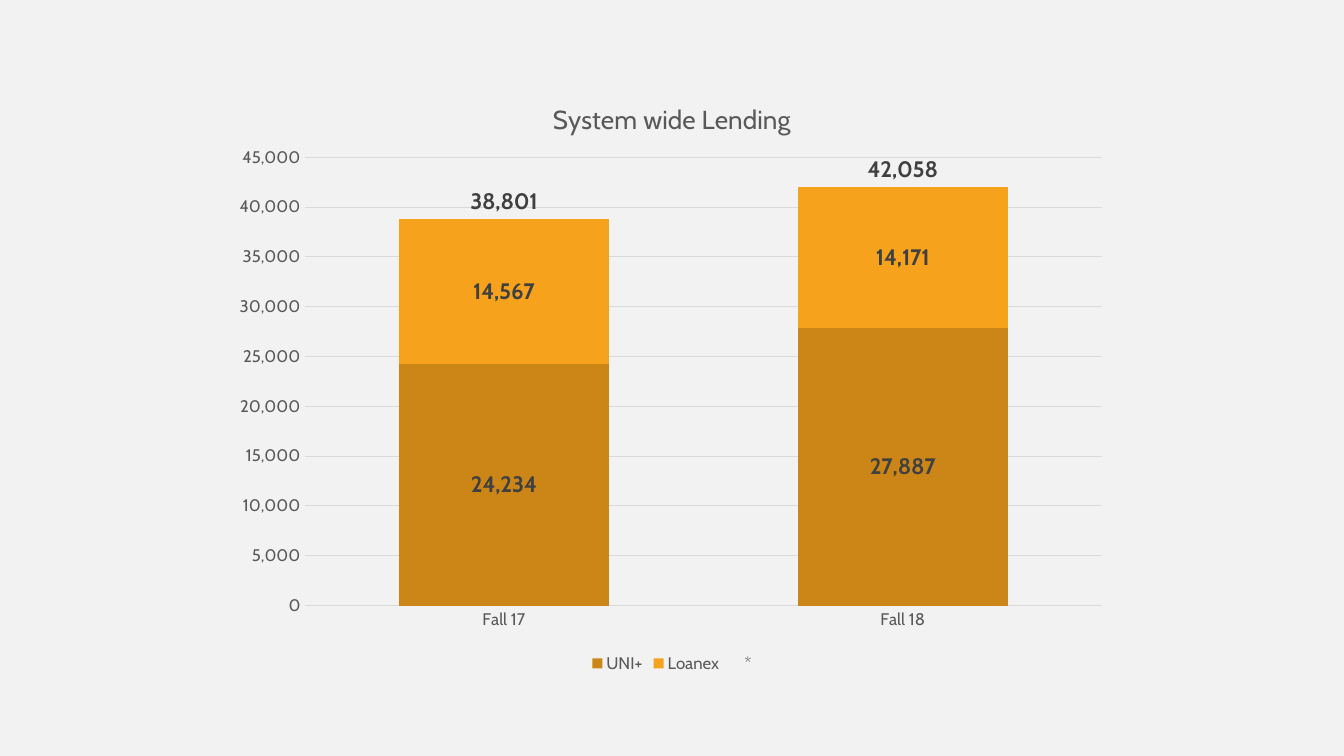
from pptx import Presentation
from pptx.chart.data import CategoryChartData
from pptx.dml.color import RGBColor
from pptx.enum.chart import XL_CHART_TYPE as ChartType
from pptx.enum.chart import XL_LABEL_POSITION as LabelPosition
from pptx.enum.chart import XL_LEGEND_POSITION as LegendPosition
from pptx.enum.chart import XL_MARKER_STYLE as MarkerStyle
from pptx.enum.chart import XL_TICK_MARK as TickMark
from pptx.oxml import parse_xml
from pptx.oxml.ns import nsdecls, qn
from pptx.util import Inches, Pt

BACKGROUND = RGBColor(0xF2, 0xF2, 0xF2)
BLACK = RGBColor(0x00, 0x00, 0x00)
TEXT_GREY = RGBColor(0x59, 0x59, 0x59)
LABEL_GREY = RGBColor(0x40, 0x40, 0x40)
RULE_GREY = RGBColor(0xD9, 0xD9, 0xD9)
BRONZE = RGBColor(0xCC, 0x86, 0x18)
AMBER = RGBColor(0xF6, 0xA2, 0x1D)
NUMBER_FORMAT = "#,##0"

TERMS = ("Fall 17", "Fall 18")
LENDING = (
    ("UNI+", (24234, 27887)),
    ("Loanex", (14567, 14171)),
    ("*", (38801, 42058)),
)


def style_font(font, size=12, color=TEXT_GREY, bold=False, name="Cabin"):
    font.name, font.size, font.bold = name, Pt(size), bold
    font.color.rgb = color


def write_text(frame, text, **style):
    span = frame.paragraphs[0].add_run()
    span.text = text
    style_font(span.font, **style)


class LendingSlide:
    """Holds the slide and builds the parts of its lending chart."""

    def __init__(self, deck):
        self.page = deck.slides.add_slide(deck.slide_layouts[6])
        fill = self.page.background.fill
        fill.solid()
        fill.fore_color.rgb = BACKGROUND

    def add_chart(self, title, categories, rows):
        data = CategoryChartData(number_format=NUMBER_FORMAT)
        data.categories = categories
        for name, values in rows:
            data.add_series(name, values)
        frame = self.page.shapes.add_chart(
            ChartType.COLUMN_STACKED, Inches(2.22), Inches(0.79),
            Inches(8.89), Inches(5.93), data)
        self.chart = frame.chart
        style_font(self.chart.font, size=10, color=BLACK)
        self.chart.has_title = True
        write_text(self.chart.chart_title.text_frame, title, size=18.6)
        self.chart.chart_title.include_in_layout = False

    def style_axes(self):
        for axis in (self.chart.category_axis, self.chart.value_axis):
            axis.major_tick_mark = axis.minor_tick_mark = TickMark.NONE
            style_font(axis.tick_labels.font)
        terms, counts = self.chart.category_axis, self.chart.value_axis
        counts.minimum_scale, counts.maximum_scale, counts.major_unit = 0, 45000, 5000
        counts.tick_labels.number_format = NUMBER_FORMAT
        counts.tick_labels.number_format_is_linked = False
        counts.format.line.fill.background()
        for line in (terms.format.line, counts.major_gridlines.format.line):
            line.color.rgb = RULE_GREY
            line.width = Pt(0.75)

    def add_legend(self):
        self.chart.has_legend = True
        legend = self.chart.legend
        legend.position = LegendPosition.BOTTOM
        legend.include_in_layout = False
        style_font(legend.font)

    def add_labels(self, series, position):
        labels = series.data_labels
        labels.show_value = True
        labels.number_format = NUMBER_FORMAT
        labels.number_format_is_linked = False
        labels.position = position
        style_font(labels.font, size=16, color=LABEL_GREY, bold=True)

    def style_columns(self, colors):
        plot = self.chart.plots[0]
        plot.gap_width, plot.overlap = 90, 100
        plot.vary_by_categories = False
        for series, color in zip(plot.series, colors):
            series.format.fill.solid()
            series.format.fill.fore_color.rgb = color
            self.add_labels(series, LabelPosition.CENTER)

    def turn_last_series_into_totals(self):
        columns = self.chart.plots[0]
        bar_chart = columns._element
        totals = bar_chart.findall(qn("c:ser"))[-1]
        line_chart = parse_xml(
            f'<c:lineChart {nsdecls("c")}><c:grouping val="standard"/>'
            '<c:varyColors val="0"/></c:lineChart>')
        for flag in totals.findall(qn("c:invertIfNegative")):
            totals.remove(flag)
        line_chart.append(totals)
        line_chart.append(parse_xml(f'<c:marker {nsdecls("c")} val="1"/>'))
        for axis_id in bar_chart.findall(qn("c:axId")):
            line_chart.append(parse_xml(
                f'<c:axId {nsdecls("c")} val="{axis_id.get("val")}"/>'))
        bar_chart.addnext(line_chart)
        series = self.chart.plots[1].series[0]
        series.smooth = False
        series.format.line.fill.background()
        series.marker.style = MarkerStyle.NONE
        self.add_labels(series, LabelPosition.ABOVE)

    def place_plot(self, **place):
        area = self.chart.plots[0]._element.getparent()
        for layout in area.findall(qn("c:layout")):
            area.remove(layout)
        parts = "".join(f'<c:{key} val="{value}"/>' for key, value in place.items())
        area.insert(0, parse_xml(
            f'<c:layout {nsdecls("c")}><c:manualLayout>'
            '<c:layoutTarget val="inner"/><c:xMode val="edge"/><c:yMode val="edge"/>'
            f'{parts}</c:manualLayout></c:layout>'))


def main():
    deck = Presentation()
    deck.slide_width, deck.slide_height = Inches(13.33), Inches(7.5)
    slide = LendingSlide(deck)
    slide.add_chart("System wide Lending", TERMS, LENDING)
    slide.style_axes()
    slide.add_legend()
    slide.turn_last_series_into_totals()
    slide.style_columns((BRONZE, AMBER))
    slide.place_plot(x=0.09, y=0.13, w=0.89, h=0.75)
    deck.save("out.pptx")


if __name__ == "__main__":
    main()
